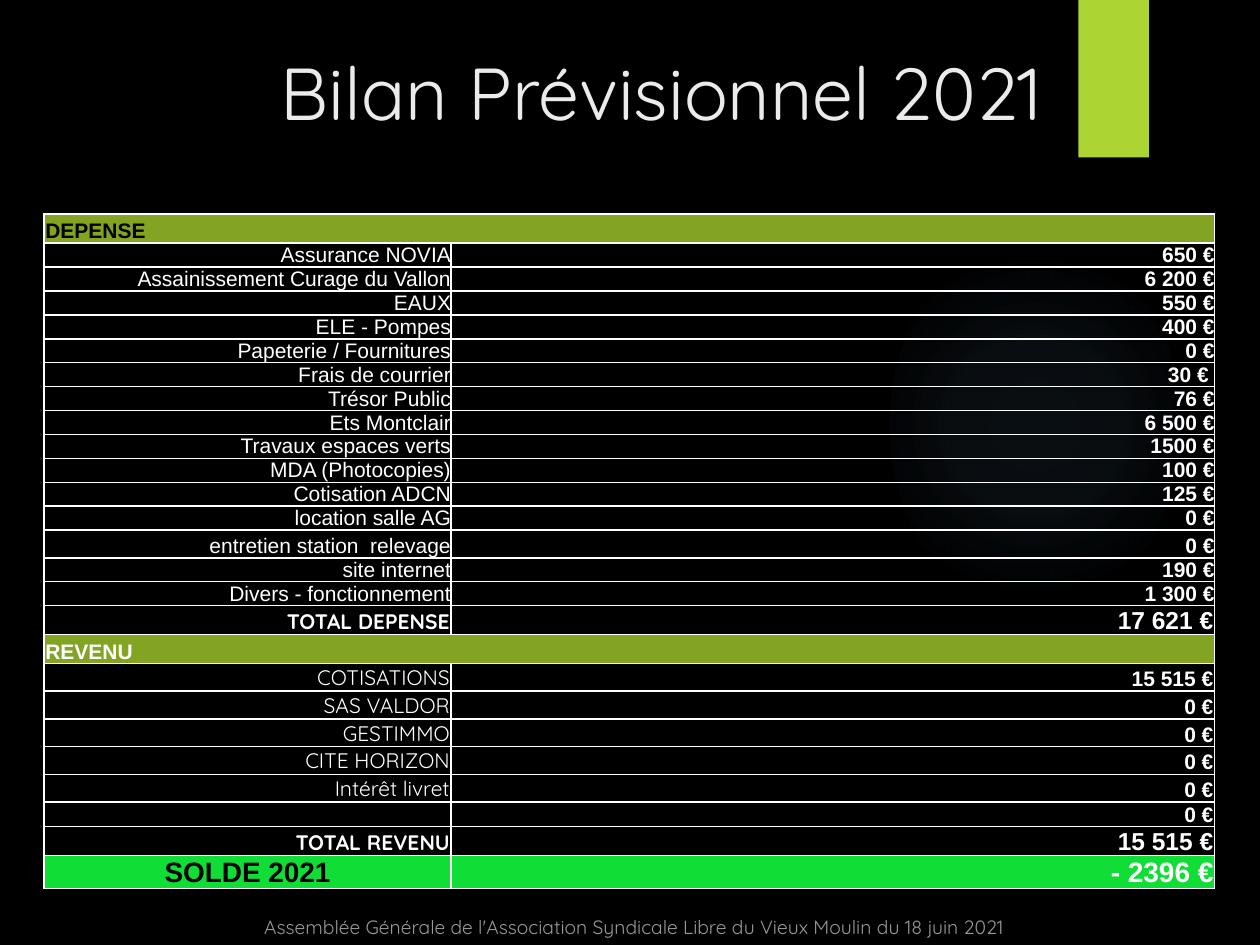
from dataclasses import dataclass

from lxml import etree
from pptx import Presentation
from pptx.dml.color import RGBColor
from pptx.enum import shapes, text
from pptx.oxml import parse_xml
from pptx.oxml import ns
from pptx.util import Inches, Pt

COLORS = {
    "background": "000000",
    "title": "EBEBEB",
    "accent": "ACD433",
    "glow": "7AC4F0",
    "section": "83A322",
    "balance": "10DE37",
    "light": "FFFFFF",
    "dark": "000000",
}
LEFT, CENTER, RIGHT = text.PP_ALIGN.LEFT, text.PP_ALIGN.CENTER, text.PP_ALIGN.RIGHT


@dataclass(frozen=True)
class CellStyle:
    size: int = 12
    font: str = "Arial"
    bold: bool = True
    color: str = "light"
    align: text.PP_ALIGN = RIGHT


@dataclass(frozen=True)
class RowStyle:
    height: float
    label: CellStyle
    amount: CellStyle = CellStyle()
    fill: str | None = None
    margin: float = 0.01


@dataclass(frozen=True)
class Row:
    style: RowStyle
    label: str
    amount: str | None = None  # None makes the label span both columns


EXPENSE = RowStyle(0.19, CellStyle(bold=False), margin=0)
TALL_EXPENSE = RowStyle(0.22, CellStyle(bold=False), margin=0)
INCOME = RowStyle(0.22, CellStyle(font="Quicksand", bold=False))
BLANK = RowStyle(0.19, CellStyle())
TOTAL = RowStyle(0.23, CellStyle(font="Quicksand"), CellStyle(size=14))
EXPENSE_HEAD = RowStyle(0.23, CellStyle(color="dark", align=LEFT), fill="section")
INCOME_HEAD = RowStyle(0.23, CellStyle(align=LEFT), fill="section")
BALANCE = RowStyle(0.26, CellStyle(size=16, color="dark", align=CENTER),
                   CellStyle(size=16), fill="balance")

ROWS = [
    Row(EXPENSE_HEAD, "DEPENSE"),
    Row(EXPENSE, "Assurance NOVIA", "650 €"),
    Row(EXPENSE, "Assainissement Curage du Vallon", "6 200 €"),
    Row(EXPENSE, "EAUX", "550 €"),
    Row(EXPENSE, "ELE - Pompes", "400 €"),
    Row(EXPENSE, "Papeterie / Fournitures", "0 €"),
    Row(EXPENSE, "Frais de courrier", "30 € "),
    Row(EXPENSE, "Trésor Public", "76 €"),
    Row(EXPENSE, "Ets Montclair", "6 500 €"),
    Row(EXPENSE, "Travaux espaces verts", "1500 €"),
    Row(EXPENSE, "MDA (Photocopies)", "100 €"),
    Row(EXPENSE, "Cotisation ADCN", "125 €"),
    Row(EXPENSE, "location salle AG", "0 €"),
    Row(TALL_EXPENSE, "entretien station  relevage", "0 €"),
    Row(EXPENSE, "site internet", "190 €"),
    Row(EXPENSE, "Divers - fonctionnement", "1 300 €"),
    Row(TOTAL, "TOTAL DEPENSE", "17 621 €"),
    Row(INCOME_HEAD, "REVENU"),
    Row(INCOME, "COTISATIONS", "15 515 €"),
    Row(INCOME, "SAS VALDOR", "0 €"),
    Row(INCOME, "GESTIMMO", "0 €"),
    Row(INCOME, "CITE HORIZON", "0 €"),
    Row(INCOME, "Intérêt livret", "0 €"),
    Row(BLANK, "", "0 €"),
    Row(TOTAL, "TOTAL REVENU", "15 515 €"),
    Row(BALANCE, "SOLDE 2021", "- 2396 €"),
]


def rgb(name: str) -> RGBColor:
    return RGBColor.from_string(COLORS[name])


def write(paragraph, content: str, style: CellStyle) -> None:
    paragraph.text = content
    paragraph.alignment = style.align
    font = paragraph.font
    font.size, font.name, font.bold = Pt(style.size), style.font, style.bold
    font.color.rgb = rgb(style.color)
    if not content:
        # An empty line takes its height from its end mark
        end_mark = etree.SubElement(paragraph._p, ns.qn("a:endParaRPr"))
        end_mark.set("sz", str(style.size * 100))


def add_borders(cell) -> None:
    properties = cell._tc.get_or_add_tcPr()
    for side in ("lnL", "lnR", "lnT", "lnB"):
        properties.append(parse_xml(
            f'<a:{side} {ns.nsdecls("a")} w="{Pt(1)}"><a:solidFill>'
            f'<a:srgbClr val="{COLORS["light"]}"/></a:solidFill></a:{side}>'))


def format_cell(cell, content: str, row_style: RowStyle, style: CellStyle) -> None:
    cell.vertical_anchor = text.MSO_ANCHOR.BOTTOM
    cell.margin_left = cell.margin_right = cell.margin_top = Inches(row_style.margin)
    cell.margin_bottom = 0
    add_borders(cell)
    if row_style.fill:
        cell.fill.solid()
        cell.fill.fore_color.rgb = rgb(row_style.fill)
    else:
        cell.fill.background()
    write(cell.text_frame.paragraphs[0], content, style)


def add_budget_table(slide) -> None:
    height = sum(row.style.height for row in ROWS)
    table = slide.shapes.add_table(len(ROWS), 2, Inches(0.35), Inches(1.7),
                                   Inches(9.29), Inches(height)).table
    table.first_row = table.horz_banding = False
    table.columns[0].width, table.columns[1].width = Inches(3.23), Inches(6.06)
    for index, row in enumerate(ROWS):
        table.rows[index].height = Inches(row.style.height)
        label, amount = table.cell(index, 0), table.cell(index, 1)
        format_cell(label, row.label, row.style, row.style.label)
        format_cell(amount, row.amount or "", row.style, row.style.amount)
        if row.amount is None:
            label.merge(amount)


def add_plain_shape(slide, kind, left: float, top: float, width: float, height: float):
    shape = slide.shapes.add_shape(kind, Inches(left), Inches(top),
                                   Inches(width), Inches(height))
    shape.shadow.inherit = False
    shape.line.fill.background()
    return shape


def add_glow(slide) -> None:
    glow = add_plain_shape(slide, shapes.MSO_SHAPE.OVAL, 7.06, 1.83, 2.31, 3.08)
    stops = "".join(
        f'<a:gs pos="{position * 1000}"><a:srgbClr val="{COLORS["glow"]}">'
        f'<a:alpha val="{opacity * 1000}"/></a:srgbClr></a:gs>'
        for position, opacity in ((0, 7), (36, 6), (69, 0), (100, 0)))
    glow._element.spPr.find(ns.qn("a:prstGeom")).addnext(parse_xml(
        f'<a:gradFill {ns.nsdecls("a")}><a:gsLst>{stops}</a:gsLst><a:path path="circle">'
        '<a:fillToRect l="50000" t="50000" r="50000" b="50000"/></a:path></a:gradFill>'))


def add_title(slide) -> None:
    title = slide.shapes.title
    title.left, title.top = Inches(1), Inches(0.3)
    title.width, title.height = Inches(8.5), Inches(0.85)
    title.text_frame.vertical_anchor = text.MSO_ANCHOR.MIDDLE
    write(title.text_frame.paragraphs[0], "Bilan Prévisionnel 2021",
          CellStyle(42, "Quicksand", False, "title", CENTER))


def add_footer(slide) -> None:
    footer = slide.shapes.add_textbox(Inches(0.07), Inches(7.21), Inches(9.93), Inches(0.29))
    frame = footer.text_frame
    frame.word_wrap = True
    frame.vertical_anchor = text.MSO_ANCHOR.BOTTOM
    write(frame.paragraphs[0],
          "Assemblée Générale de l'Association Syndicale Libre du Vieux Moulin du 18 juin 2021",
          CellStyle(11, "Quicksand", False, "light", CENTER))
    for color in footer._element.iter(ns.qn("a:srgbClr")):
        etree.SubElement(color, ns.qn("a:alpha")).set("val", "60000")


def main() -> None:
    presentation = Presentation()
    presentation.slide_width, presentation.slide_height = Inches(10), Inches(7.5)
    slide = presentation.slides.add_slide(presentation.slide_layouts[5])
    slide.background.fill.solid()
    slide.background.fill.fore_color.rgb = rgb("background")

    add_glow(slide)
    accent = add_plain_shape(slide, shapes.MSO_SHAPE.RECTANGLE, 8.56, 0, 0.56, 1.25)
    accent.fill.solid()
    accent.fill.fore_color.rgb = rgb("accent")
    add_title(slide)
    add_budget_table(slide)
    add_footer(slide)
    presentation.save("out.pptx")


if __name__ == "__main__":
    main()
